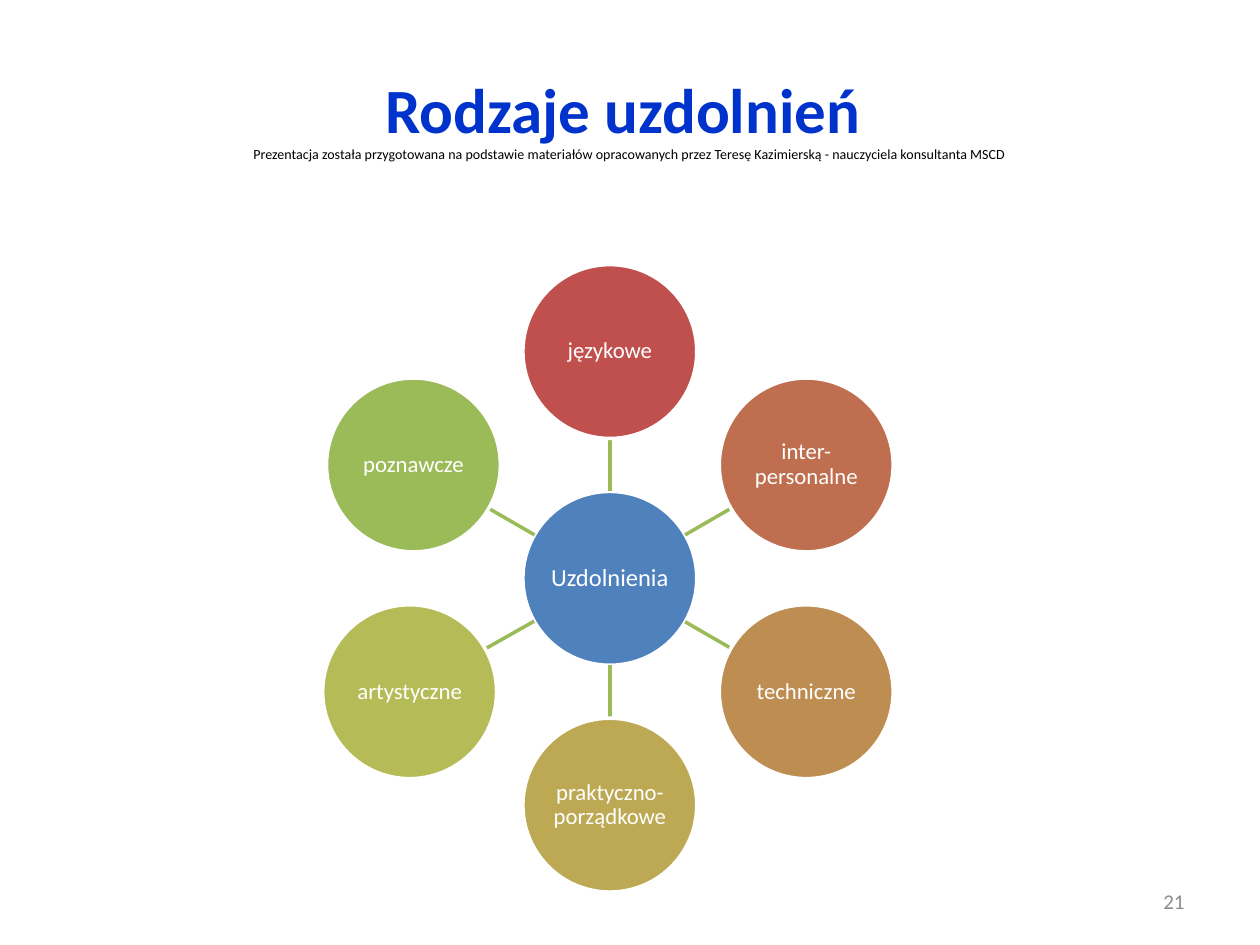
"""Builds a slide with a radial diagram of the kinds of talent."""
import math

from lxml import etree
from pptx import Presentation
from pptx.dml.color import RGBColor
from pptx.enum import shapes, text
from pptx.oxml import ns
from pptx.util import Inches, Pt

COLORS = {
    "title": "0033CC", "credit": "000000", "number": "8C8C8C", "white": "FFFFFF",
    "hub": "4F81BD", "spoke": "9BBB59", "red": "C0504D", "rust": "BF6F4F",
    "ochre": "BE8D52", "sand": "BDA954", "olive": "B5BC57", "green": "9BBB59",
}
DIAMETER = 1.38
RADIUS = DIAMETER / 2
ORBIT = 1.8
HUB_X, HUB_Y = 4.84, 4.59


def add_run(paragraph, wording, size, color, bold=False):
    run = paragraph.add_run()
    run.text = wording
    run.font.name = "Calibri"
    run.font.size = Pt(size)
    run.font.bold = bold
    run.font.color.rgb = RGBColor.from_string(COLORS[color])


def add_circle(x, y, lines, size, color):
    circle = slide.shapes.add_shape(
        shapes.MSO_SHAPE.OVAL, Inches(x - RADIUS), Inches(y - RADIUS),
        Inches(DIAMETER), Inches(DIAMETER))
    circle.shadow.inherit = False
    circle.fill.solid()
    circle.fill.fore_color.rgb = RGBColor.from_string(COLORS[color])
    circle.line.color.rgb = RGBColor.from_string(COLORS["white"])
    circle.line.width = Pt(2)
    frame = circle.text_frame
    frame.word_wrap = True
    frame.vertical_anchor = text.MSO_ANCHOR.MIDDLE
    frame.margin_left = frame.margin_right = Inches(0.01)
    frame.margin_top = frame.margin_bottom = Inches(0.01)
    label = frame.paragraphs[0]
    label.alignment = text.PP_ALIGN.CENTER
    label.line_spacing = 0.9
    for i, line in enumerate(lines):
        if i:
            label.add_line_break()
        add_run(label, line, size, "white")


prs = Presentation()
prs.slide_width, prs.slide_height = Inches(10), Inches(7.5)
slide = prs.slides.add_slide(prs.slide_layouts[6])

heading = slide.shapes.add_textbox(Inches(0.5), Inches(0.3), Inches(9), Inches(1.25))
heading.text_frame.word_wrap = True
heading.text_frame.vertical_anchor = text.MSO_ANCHOR.MIDDLE
title = heading.text_frame.paragraphs[0]
title.alignment = text.PP_ALIGN.CENTER
add_run(title, "Rodzaje uzdolnień ", 36, "title", True)
title.add_line_break()
add_run(title, "Prezentacja została przygotowana na podstawie materiałów opracowanych "
        "przez Teresę Kazimierską - nauczyciela konsultanta MSCD", 8, "credit")

add_circle(HUB_X, HUB_Y, ["Uzdolnienia"], 14, "hub")

talents = [
    (["językowe"], "red", 0),
    (["inter-", "personalne"], "rust", 0),
    (["techniczne"], "ochre", 0),
    (["praktyczno-porządkowe"], "sand", 0),
    (["artystyczne"], "olive", -0.03),
    (["poznawcze"], "green", 0),
]
for i, (lines, color, nudge) in enumerate(talents):
    angle = math.radians(60 * i - 90)
    dx = ORBIT * math.cos(angle) + nudge
    dy = ORBIT * math.sin(angle)
    distance = math.hypot(dx, dy)
    start, end = RADIUS / distance, 1 - RADIUS / distance
    spoke = slide.shapes.add_connector(
        shapes.MSO_CONNECTOR.STRAIGHT,
        Inches(HUB_X + dx * start), Inches(HUB_Y + dy * start),
        Inches(HUB_X + dx * end), Inches(HUB_Y + dy * end))
    spoke.line.color.rgb = RGBColor.from_string(COLORS["spoke"])
    spoke.line.width = Pt(2)
    etree.SubElement(spoke._element.spPr, ns.qn("a:effectLst"))
    add_circle(HUB_X + dx, HUB_Y + dy, lines, 13, color)

footer = slide.shapes.add_textbox(Inches(7.17), Inches(6.95), Inches(2.33), Inches(0.4))
footer.text_frame.word_wrap = True
footer.text_frame.vertical_anchor = text.MSO_ANCHOR.MIDDLE
page_number = footer.text_frame.paragraphs[0]
page_number.alignment = text.PP_ALIGN.RIGHT
add_run(page_number, "21", 12, "number")

prs.save("out.pptx")
